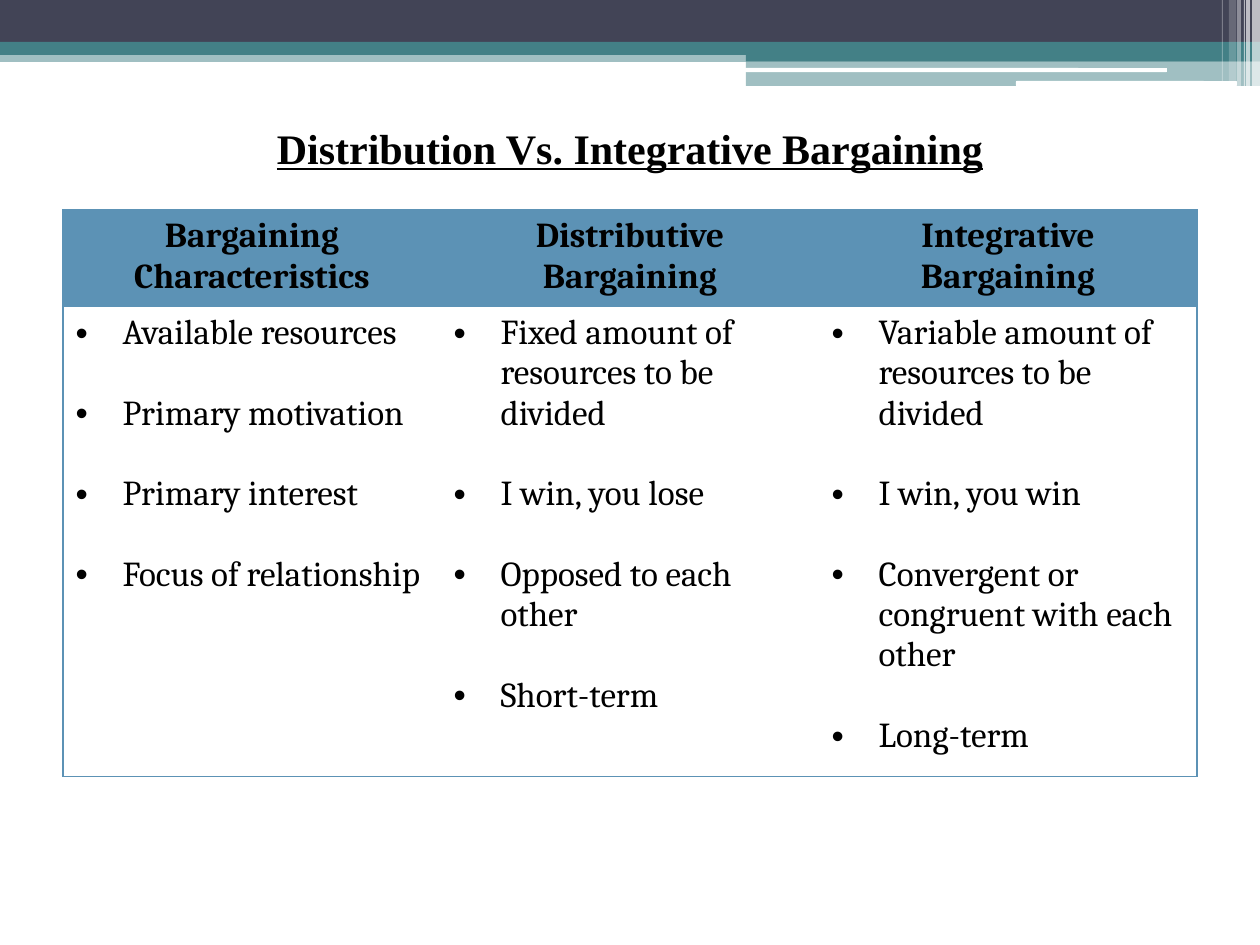
from dataclasses import dataclass

from lxml import etree
from pptx import Presentation
from pptx.dml.color import RGBColor
from pptx.enum.shapes import MSO_SHAPE
from pptx.enum.text import MSO_ANCHOR, PP_ALIGN
from pptx.oxml.ns import qn
from pptx.util import Emu, Pt

RECT = MSO_SHAPE.RECTANGLE
ROUND = MSO_SHAPE.ROUNDED_RECTANGLE
CENTER, LEFT = PP_ALIGN.CENTER, PP_ALIGN.LEFT
MIDDLE = MSO_ANCHOR.MIDDLE

PX_PER_INCH = 126
NAVY, TEAL, WHITE, BLACK, BLUE = "424456", "438086", "FFFFFF", "000000", "5C92B5"
TITLE_FORMAT = {"name": "Times New Roman", "size": Pt(24), "bold": True, "underline": True}
HEADER_FORMAT = {"name": "Cambria", "size": Pt(20), "bold": True}
BODY_FORMAT = {"name": "Cambria", "size": Pt(20), "bold": False}
ITEM_GAP = Pt(23)
BULLET_INDENT = 47


@dataclass
class Bar:
    left: int
    top: int
    width: int
    height: int
    color: str
    opacity: int = 100
    kind: int = RECT


@dataclass
class Column:
    heading: str
    items: list[str]


BARS = [
    # Full-width bands
    Bar(0, 50, 1260, 12, TEAL, 50),
    Bar(0, 0, 1260, 42, NAVY),
    Bar(0, 42, 1260, 13, TEAL),
    # Right-hand bands with white rules
    Bar(746, 49, 514, 12, TEAL),
    Bar(746, 61, 514, 25, TEAL, 50),
    Bar(745, 68, 422, 4, WHITE, kind=ROUND),
    Bar(1016, 81, 221, 5, WHITE, kind=ROUND),
    # Vertical stripes at the right edge
    Bar(1252, 0, 8, 86, WHITE, 65),
    Bar(1246, 0, 4, 86, WHITE, 65),
    Bar(1244, 0, 1, 86, WHITE, 60),
    Bar(1237, 0, 4, 86, WHITE, 40),
    Bar(1229, 0, 7, 81, WHITE, 20),
    Bar(1222, 0, 1, 81, WHITE, 30),
]

COLUMNS = [
    Column("Bargaining Characteristics", [
        "Available resources", "Primary motivation",
        "Primary interest", "Focus of relationship"]),
    Column("Distributive Bargaining", [
        "Fixed amount of resources to be divided", "I win, you lose",
        "Opposed to each other", "Short-term"]),
    Column("Integrative Bargaining", [
        "Variable amount of resources to be divided", "I win, you win",
        "Convergent or congruent with each other", "Long-term"]),
]


def px(length: int) -> Emu:
    return Emu(round(length * 914400 / PX_PER_INCH))


def rgb(color: str) -> RGBColor:
    return RGBColor.from_string(color)


def draw_bar(slide, bar: Bar) -> None:
    shape = slide.shapes.add_shape(
        bar.kind, px(bar.left), px(bar.top), px(bar.width), px(bar.height))
    shape.shadow.inherit = False
    shape.fill.solid()
    shape.fill.fore_color.rgb = rgb(bar.color)
    shape.line.fill.background()
    if bar.opacity < 100:
        color = shape.fill._xPr.find(f".//{qn('a:srgbClr')}")
        etree.SubElement(color, qn("a:alpha"), val=str(bar.opacity * 1000))


def write(para, text: str, font_format: dict, align: int) -> None:
    para.alignment = align
    span = para.add_run()
    span.text = text
    for name, value in font_format.items():
        setattr(span.font, name, value)
    span.font.color.rgb = rgb(BLACK)


def add_bullet(para) -> None:
    properties = para._p.get_or_add_pPr()
    properties.set("marL", str(px(BULLET_INDENT)))
    properties.set("indent", str(-px(BULLET_INDENT)))
    etree.SubElement(properties, qn("a:buFont"), typeface="Arial")
    etree.SubElement(properties, qn("a:buChar"), char="•")


def style_cell(cell, color: str, sides: str) -> None:
    """Fill the cell and outline only the named sides (L, R, T, B)."""
    cell.fill.solid()
    cell.fill.fore_color.rgb = rgb(color)
    properties = cell._tc.get_or_add_tcPr()
    for position, side in enumerate("LRTB"):
        border = etree.Element(qn(f"a:ln{side}"), w=str(Pt(0.75)))
        if side in sides:
            fill = etree.SubElement(border, qn("a:solidFill"))
            etree.SubElement(fill, qn("a:srgbClr"), val=BLUE)
        else:
            etree.SubElement(border, qn("a:noFill"))
        properties.insert(position, border)


def draw_title(slide, text: str) -> None:
    box = slide.shapes.add_textbox(px(63), px(95), px(1134), px(105))
    box.text_frame.word_wrap = True
    box.text_frame.vertical_anchor = MIDDLE
    write(box.text_frame.paragraphs[0], text, TITLE_FORMAT, CENTER)


def draw_table(slide, columns: list[Column]) -> None:
    heights = (94, 456)
    table = slide.shapes.add_table(
        len(heights), len(columns), px(63), px(210), px(1134), px(sum(heights))).table
    table.first_row = table.horz_banding = False
    for row, height in zip(table.rows, heights):
        row.height = px(height)
    for index, column in enumerate(columns):
        edge = {0: "L", len(columns) - 1: "R"}.get(index, "")
        header, body = table.cell(0, index), table.cell(1, index)
        style_cell(header, BLUE, edge + "T")
        write(header.text_frame.paragraphs[0], column.heading, HEADER_FORMAT, CENTER)
        style_cell(body, WHITE, edge + "TB")
        frame = body.text_frame
        for number, item in enumerate(column.items):
            para = frame.add_paragraph() if number else frame.paragraphs[0]
            if number:
                para.space_before = ITEM_GAP
            write(para, item, BODY_FORMAT, LEFT)
            add_bullet(para)


def main() -> None:
    deck = Presentation()
    deck.slide_width, deck.slide_height = px(1260), px(945)
    page = deck.slides.add_slide(deck.slide_layouts[6])
    for bar in BARS:
        draw_bar(page, bar)
    draw_title(page, "Distribution Vs. Integrative Bargaining")
    draw_table(page, COLUMNS)
    deck.save("out.pptx")


if __name__ == "__main__":
    main()
